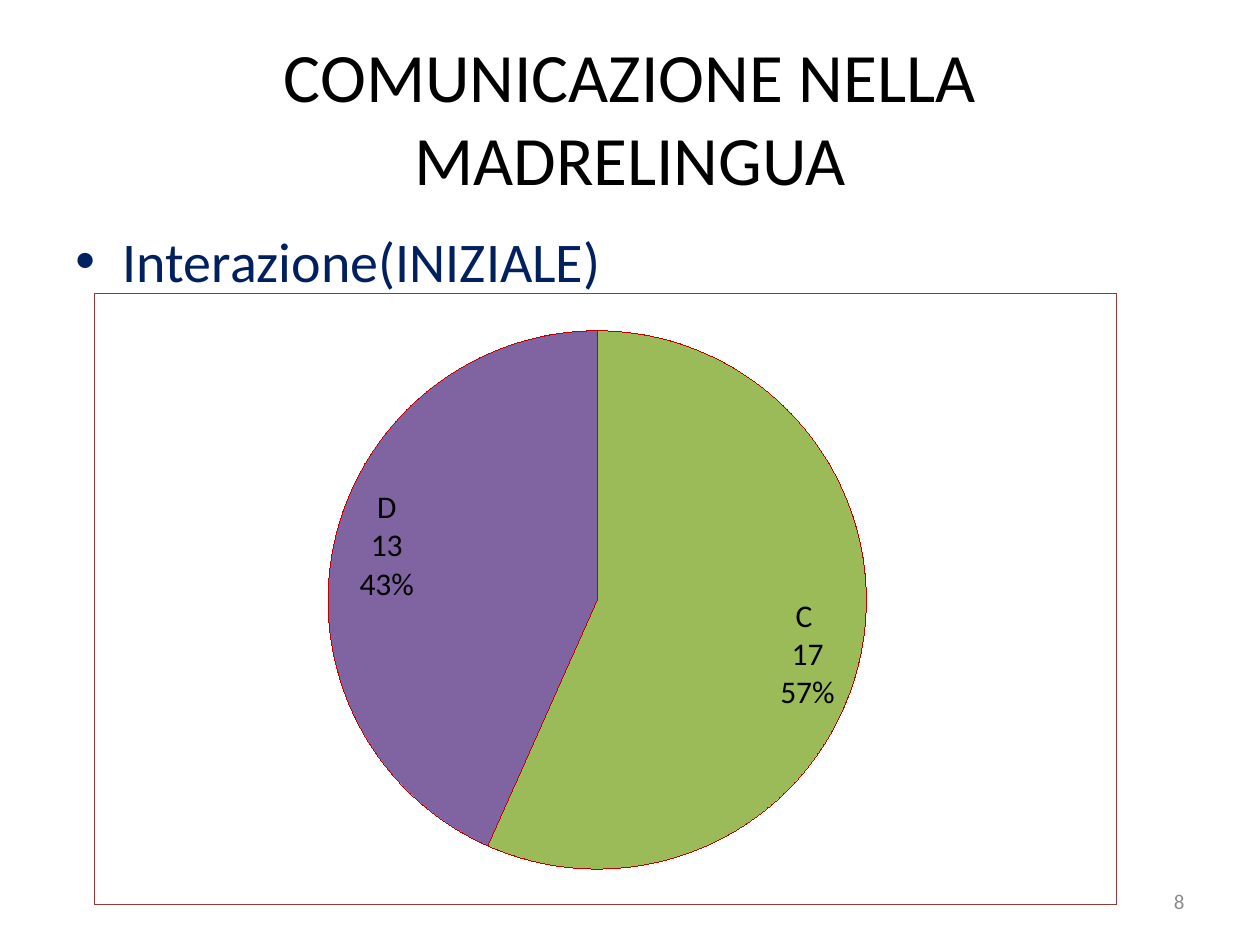
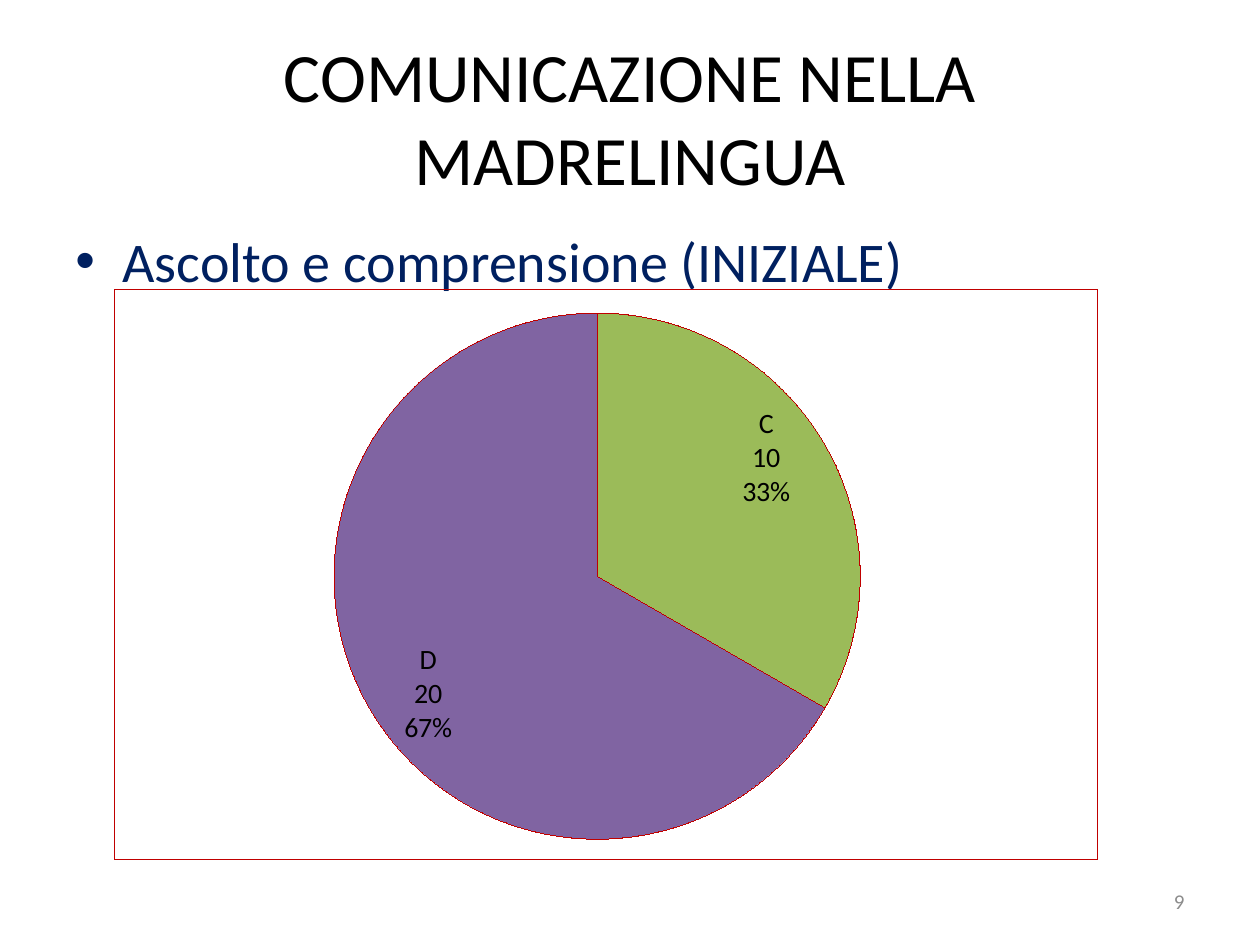
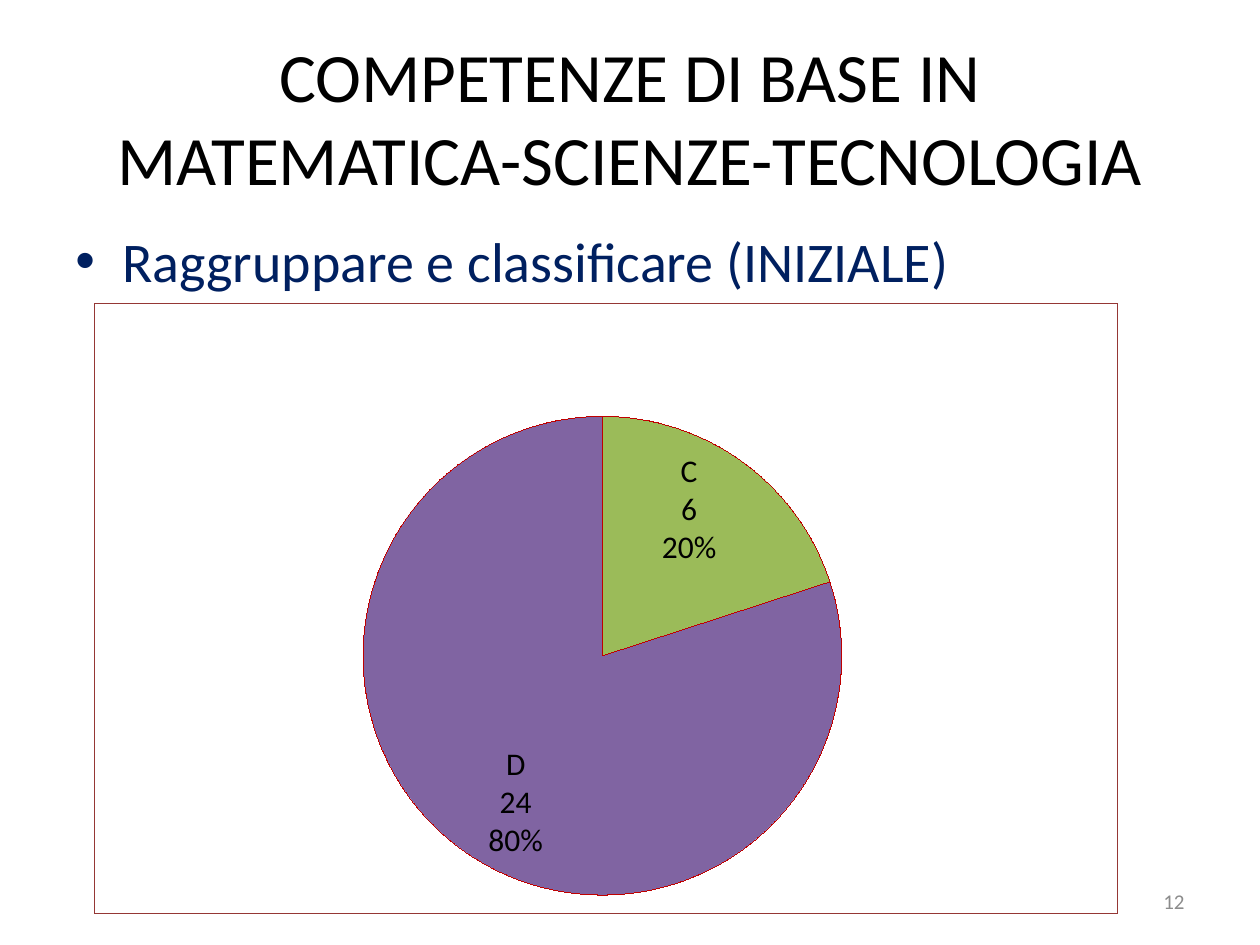
from lxml.etree import SubElement
from pptx import Presentation
from pptx.chart.data import CategoryChartData
from pptx.dml.color import RGBColor
from pptx.enum.chart import XL_CHART_TYPE, XL_LABEL_POSITION
from pptx.enum.text import MSO_ANCHOR, PP_ALIGN
from pptx.oxml import parse_xml
from pptx.oxml.ns import nsdecls, qn
from pptx.util import Pt

FONT = "Calibri"
BLACK, NAVY, GREY, RED, MAROON = "000000", "002060", "8C8C8C", "C00000", "953735"
LEVEL_COLOURS = ["4F81BD", "C0504D", "9BBB59", "8064A2"]

TITLE_BOX = (36, 21.6, 648, 90)
SKILL_BOX = (36, 126, 648, 356.4)
NUMBER_BOX = (516, 500.4, 168, 28.8)
BULLET_INDENT = 27

# frame: left, top, width, height; pie: the same as shares of the frame
ASSESSMENTS = [
    dict(title="COMUNICAZIONE NELLA MADRELINGUA", skill="Interazione(INIZIALE)", number="8",
         levels=["A", "B", "C ", "D"], pupils=[0, 0, 17, 13], label_size=18,
         frame=(54, 167.76, 583.92, 349.2), border=MAROON,
         pie=(0.107, 0.061, 0.77, 0.881), pie_behind=True),
    dict(title="COMUNICAZIONE NELLA MADRELINGUA", skill="Ascolto e comprensione (INIZIALE)",
         number="9", levels=["A", "B", "C", "D"], pupils=[0, 0, 10, 20], label_size=16,
         frame=(65.52, 165.6, 561.6, 325.44), border=RED,
         pie=(0.104, 0.041, 0.774, 0.924), pie_behind=False),
    dict(title="COMPETENZE DI BASE IN MATEMATICA-SCIENZE-TECNOLOGIA",
         skill="Raggruppare e classificare (INIZIALE)", number="12",
         levels=["A", "B", "C", "D"], pupils=[0, 0, 6, 24], label_size=18,
         frame=(54, 173.52, 584.64, 348.48), border=MAROON,
         pie=(0.262, 0.185, 0.469, 0.785), pie_behind=False),
]


def colour(hex_code):
    return RGBColor.from_string(hex_code)


def add_text(slide, text, box, size, ink, align=PP_ALIGN.LEFT, anchor=MSO_ANCHOR.MIDDLE,
             space_before=0, bullet_indent=None):
    frame = slide.shapes.add_textbox(*map(Pt, box)).text_frame
    frame.word_wrap = True
    frame.vertical_anchor = anchor
    paragraph = frame.paragraphs[0]
    paragraph.alignment = align
    paragraph.space_before = Pt(space_before)
    run = paragraph.add_run()
    run.text = text
    run.font.size, run.font.name = Pt(size), FONT
    run.font.color.rgb = colour(ink)
    if bullet_indent:
        properties = paragraph._p.get_or_add_pPr()
        properties.set("marL", str(Pt(bullet_indent)))
        properties.set("indent", str(-Pt(bullet_indent)))
        SubElement(properties, qn("a:buFont"), typeface="Arial")
        SubElement(properties, qn("a:buChar"), char="•")


def frame_chart(chart, border, pie):
    """Outline the chart area and fix the place of the pie within it."""
    chart.element.find(qn("c:chart")).addnext(parse_xml(
        f'<c:spPr {nsdecls("c", "a")}><a:noFill/><a:ln><a:solidFill>'
        f'<a:srgbClr val="{border}"/></a:solidFill></a:ln></c:spPr>'))
    plot_area = chart.element.find(".//" + qn("c:plotArea"))
    for layout in plot_area.findall(qn("c:layout")):
        plot_area.remove(layout)
    modes = '<c:xMode val="edge"/><c:yMode val="edge"/>'
    places = "".join(f'<c:{key} val="{share}"/>' for key, share in zip("xywh", pie))
    plot_area.insert(0, parse_xml(
        f'<c:layout {nsdecls("c")}><c:manualLayout><c:layoutTarget val="inner"/>'
        f'{modes}{places}</c:manualLayout></c:layout>'))


def label_slices(series, pupils, size):
    """Show level, count and share on separate lines, for non-empty slices only."""
    labels = series.data_labels
    labels.show_category_name = labels.show_value = labels.show_percentage = True
    labels.position = XL_LABEL_POSITION.BEST_FIT
    labels.font.size, labels.font.name = Pt(size), FONT
    labels.font.color.rgb = colour(BLACK)
    element = series._element.find(qn("c:dLbls"))
    element.find(qn("c:showBubbleSize")).addnext(
        parse_xml(f'<c:separator {nsdecls("c")}>\n</c:separator>'))
    empty = [index for index, count in enumerate(pupils) if count == 0]
    for place, index in enumerate(empty):
        element.insert(place, parse_xml(
            f'<c:dLbl {nsdecls("c")}><c:idx val="{index}"/><c:delete val="1"/></c:dLbl>'))


def add_level_pie(slide, item):
    data = CategoryChartData()
    data.categories = item["levels"]
    data.add_series("Series 1", item["pupils"])
    chart = slide.shapes.add_chart(XL_CHART_TYPE.PIE, *map(Pt, item["frame"]), data).chart
    chart.has_title = chart.has_legend = False
    chart.font.size, chart.font.name = Pt(18), FONT
    chart.font.color.rgb = colour(BLACK)
    chart.plots[0].vary_by_categories = True
    series = chart.plots[0].series[0]
    for index, fill in enumerate(LEVEL_COLOURS):
        look = series.points[index].format
        look.fill.solid()
        look.fill.fore_color.rgb = colour(fill)
        look.line.color.rgb = colour(RED)
    label_slices(series, item["pupils"], item["label_size"])
    frame_chart(chart, item["border"], item["pie"])


def add_assessment(deck, item):
    slide = deck.slides.add_slide(deck.slide_layouts[6])
    if item["pie_behind"]:
        add_level_pie(slide, item)
    add_text(slide, item["title"], TITLE_BOX, 39.6, BLACK, align=PP_ALIGN.CENTER)
    add_text(slide, item["skill"], SKILL_BOX, 32, NAVY, anchor=MSO_ANCHOR.TOP,
             space_before=6.4, bullet_indent=BULLET_INDENT)
    add_text(slide, item["number"], NUMBER_BOX, 12, GREY, align=PP_ALIGN.RIGHT)
    if not item["pie_behind"]:
        add_level_pie(slide, item)


def main():
    deck = Presentation()
    deck.slide_width, deck.slide_height = Pt(720), Pt(540)
    for item in ASSESSMENTS:
        add_assessment(deck, item)
    deck.save("out.pptx")


if __name__ == "__main__":
    main()
